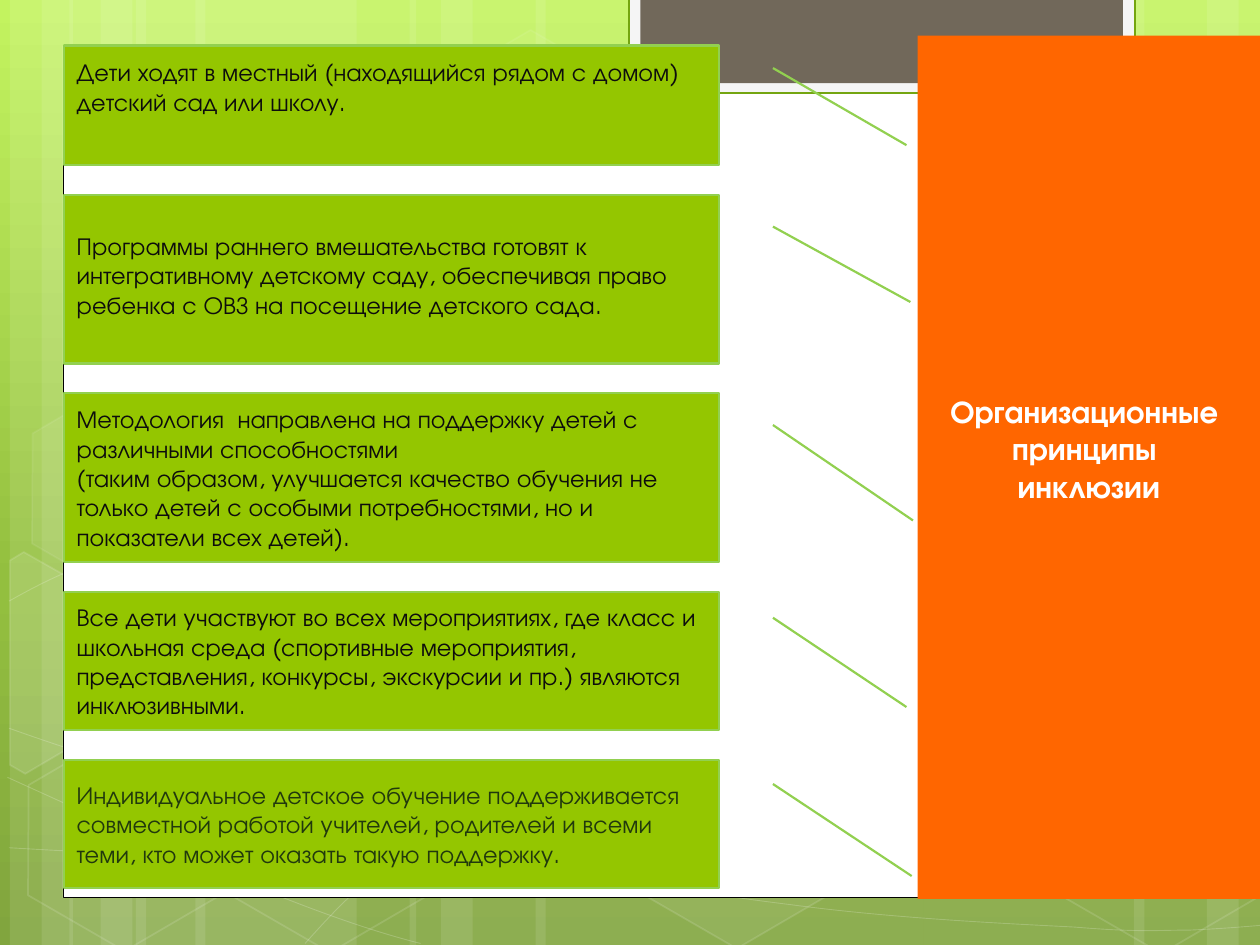
from copy import deepcopy

from lxml import etree
from pptx import Presentation
from pptx.dml.color import RGBColor
from pptx.enum.shapes import MSO_SHAPE
from pptx.enum.text import MSO_ANCHOR, PP_ALIGN
from pptx.oxml.ns import qn
from pptx.util import Cm, Pt

RECTANGLE, HEXAGON = MSO_SHAPE.RECTANGLE, MSO_SHAPE.HEXAGON
CALLOUT = MSO_SHAPE.LINE_CALLOUT_1
MIDDLE = MSO_ANCHOR.MIDDLE
LEFT, CENTER = PP_ALIGN.LEFT, PP_ALIGN.CENTER

FONT = "TeX Gyre Adventor"
WHITE = RGBColor(0xFF, 0xFF, 0xFF)
BLACK = RGBColor(0x00, 0x00, 0x00)
PALE_GREY = RGBColor(0xF5, 0xF5, 0xF5)
TAUPE = RGBColor(0x71, 0x68, 0x5A)
OLIVE = RGBColor(0x74, 0xA5, 0x10)
ORANGE = RGBColor(0xFF, 0x66, 0x00)
LIME = RGBColor(0x94, 0xC6, 0x00)
LIGHT_GREEN = RGBColor(0x92, 0xD0, 0x50)
INK = RGBColor(0x0D, 0x0D, 0x0D)
DARK_GREEN = RGBColor(0x21, 0x39, 0x0D)
SKY = [(0, RGBColor(0xC3, 0xF3, 0x5F)), (0.62, RGBColor(0x93, 0xBF, 0x3F)),
       (1, RGBColor(0x81, 0xA5, 0x3E))]

WIDTH, HEIGHT = 25.4, 19.05

# left, width
BANDS = [(2.74, 4.45), (0.2, 1.27), (0.84, 2.11), (3.94, 4.45), (1.4, 1.27),
         (2.03, 2.11), (18.62, 4.45), (24.33, 1.07), (22.86, 2.11),
         (10.8, 7.82), (8.26, 1.27), (8.89, 2.11)]

# start point, then two control points and an end point for each segment
CURVES = [
    [(0.18, 17.09), (1.55, 17.17), (2.92, 17.25), (4.83, 17.22), (6.73, 17.2),
     (9.09, 17.15), (11.63, 16.89), (14.17, 16.64), (17.78, 16.15),
     (20.12, 15.67), (22.43, 15.19), (24.82, 14.43), (25.58, 14)],
    [(0.18, 12.12), (0.91, 11.71), (1.65, 11.33), (3.07, 10.95), (4.52, 10.57),
     (6.58, 10.01), (8.81, 9.83), (11.07, 9.65), (13.82, 9.63),
     (16.61, 9.83), (19.41, 10.03), (24.05, 10.82), (25.58, 11.02)],
    [(0.15, 15.67), (3.23, 17.07), (6.27, 18.47), (8.48, 19.02)],
    [(0.18, 14.68), (0.97, 14.96), (1.78, 15.24), (3.25, 15.65), (4.72, 16.03),
     (6.93, 16.66), (9.07, 17.09), (11.18, 17.53), (13.84, 17.98),
     (15.95, 18.24), (18.06, 18.52), (20.32, 18.62), (21.67, 18.69),
     (22.99, 18.8), (23.34, 18.75), (24, 18.75), (24.66, 18.72),
     (25.12, 18.68), (25.58, 18.64)],
    [(6.15, 19.02), (6.6, 18.52), (7.06, 18.01), (7.67, 17.55), (8.28, 17.09),
     (9.14, 16.59), (9.86, 16.23), (10.57, 15.88), (11, 15.72),
     (11.94, 15.47), (12.85, 15.21), (14.55, 14.86), (15.44, 14.68),
     (16.36, 14.5), (16.48, 14.5), (17.27, 14.45), (18.06, 14.38),
     (19.3, 14.27), (20.17, 14.27), (21.06, 14.25), (22.5, 14.27),
     (22.5, 14.27), (23, 14.27), (23.6, 14.27), (24.21, 14.27),
     (24.66, 14.3), (25.1, 14.33), (25.55, 14.38)],
]

# left, top, fill opacity (None for no fill), line opacity
HEXAGONS = [(8.48, 0.91, 4, 8), (12.62, 14.96, 6, 12), (0.28, 15.01, None, 12),
            (0.36, 7.92, 7, 8), (4.42, 15.04, None, 12), (21.18, 15.06, None, 12)]
CUT_HEXAGON = [(0.2, 11.3), (0.48, 11.13), (2.44, 12.24), (2.41, 14.48),
               (0.51, 15.6), (0.2, 15.42)]

# lines of text, height, extra space above and below, leader end (y, x), colour
PRINCIPLES = [
    (["Дети ходят в местный (находящийся рядом с домом) детский сад или школу."],
     2.41, 0, 0.76, (0.833, -0.287), INK),
    (["Программы раннего вмешательства готовят к интегративному детскому саду, "
      "обеспечивая право ребенка с ОВЗ на посещение детского сада."],
     3.4, 0.59, 0.76, (0.635, -0.293), INK),
    (["Методология  направлена на поддержку детей с различными способностями ",
      "(таким образом, улучшается качество обучения не только детей с особыми "
      "потребностями, но и показатели всех детей)."],
     3.4, 0, 0, (0.754, -0.297), INK),
    (["Все дети участвуют во всех мероприятиях, где класс и школьная среда "
      "(спортивные мероприятия, представления, конкурсы, экскурсии и пр.) "
      "являются инклюзивными."],
     2.79, 0, 0, (0.833, -0.287), INK),
    (["Индивидуальное детское обучение поддерживается совместной работой "
      "учителей, родителей и всеми теми, кто может оказать такую поддержку."],
     2.59, 0, 0, (0.904, -0.295), DARK_GREEN),
]


def paint(shape, fill=None, line=None, weight=1, fill_alpha=100, line_alpha=100):
    """Sets fill and outline; the alphas are opacities in percent."""
    shape.shadow.inherit = False
    for part, colour in ((shape.fill, fill), (shape.line.fill, line)):
        if colour is None:
            part.background()
        else:
            part.solid()
            part.fore_color.rgb = colour
    if line is not None:
        shape.line.width = Pt(weight)
    for route, alpha in (("p:spPr/a:solidFill/a:srgbClr", fill_alpha),
                         ("p:spPr/a:ln/a:solidFill/a:srgbClr", line_alpha)):
        if alpha < 100:
            for colour in shape.element.xpath(route):
                etree.SubElement(colour, qn("a:alpha"), val=str(alpha * 1000))


def add_box(slide, kind, left, top, width, height, **style):
    box = slide.shapes.add_shape(kind, Cm(left), Cm(top), Cm(width), Cm(height))
    paint(box, **style)
    return box


def add_outline(slide, points, close, **style):
    start, *rest = [(Cm(x), Cm(y)) for x, y in points]
    builder = slide.shapes.build_freeform(*start)
    builder.add_line_segments(rest, close=close)
    outline = builder.convert_to_shape()
    paint(outline, **style)
    return outline


def bend(outline):
    """Joins each three straight segments into one cubic Bezier segment."""
    segments = outline.element.xpath(".//a:lnTo")
    for i in range(0, len(segments), 3):
        bezier = etree.Element(qn("a:cubicBezTo"))
        segments[i].addprevious(bezier)
        for segment in segments[i:i + 3]:
            bezier.append(segment[0])
            segment.getparent().remove(segment)


def write(shape, paragraphs, size, colour, align, bold=False, above=0, below=0):
    """Writes paragraphs, each a list of lines, with extra space above and below."""
    frame = shape.text_frame
    frame.word_wrap = True
    frame.vertical_anchor = MIDDLE
    frame.margin_top, frame.margin_bottom = Cm(0.13 + above), Cm(0.13 + below)
    for i, lines in enumerate(paragraphs):
        paragraph = frame.paragraphs[0] if i == 0 else frame.add_paragraph()
        paragraph.alignment = align
        for j, line in enumerate(lines):
            if j:
                paragraph.add_line_break()
            run = paragraph.add_run()
            run.text = line
            run.font.name, run.font.size, run.font.bold = FONT, Pt(size), bold
            run.font.color.rgb = colour


def add_backdrop(slide):
    fill = slide.background.fill
    fill.gradient()
    fill.gradient_angle = 270
    stop_list = slide.element.xpath(".//a:gsLst")[0]
    stop_list.append(deepcopy(stop_list[-1]))
    for stop, (position, colour) in zip(fill.gradient_stops, SKY):
        stop.position = position
        stop.color.rgb = colour
    for left, width in BANDS:
        add_box(slide, RECTANGLE, left, 0, width, HEIGHT, fill=WHITE, fill_alpha=10)
    for curve in CURVES:
        bend(add_outline(slide, curve, False, line=WHITE, weight=0.5, line_alpha=20))
    for left, top, fill_alpha, line_alpha in HEXAGONS:
        hexagon = add_box(slide, HEXAGON, left, top, 4.45, 3.86,
                          fill=WHITE if fill_alpha else None, line=WHITE,
                          fill_alpha=fill_alpha or 100, line_alpha=line_alpha)
        hexagon.adjustments[0] = 0.285
        hexagon.rotation = 30
    add_outline(slide, CUT_HEXAGON, True, fill=WHITE, line=WHITE,
                fill_alpha=10, line_alpha=12)


def add_panel(slide, left, top, width, height):
    add_box(slide, RECTANGLE, left, top, width, height, fill=WHITE, line=BLACK, weight=0.5)
    add_box(slide, RECTANGLE, left + 11.41, top - 0.97, 10.21, 1.93,
            fill=PALE_GREY, line=OLIVE, weight=1.25)
    add_box(slide, RECTANGLE, left + 11.64, top - 0.97, 9.73, 1.73, fill=TAUPE)


def add_title(slide, left, top, width, height):
    title = add_box(slide, RECTANGLE, left, top, width, height, fill=ORANGE)
    write(title, [["Организационные "], ["принципы ", "инклюзии"]], 18, WHITE, CENTER,
          bold=True, below=0.76)


def add_principles(slide, left, top, width, gap):
    for lines, height, above, below, leader_end, colour in PRINCIPLES:
        callout = add_box(slide, CALLOUT, left, top, width, height,
                          fill=LIME, line=LIGHT_GREEN, weight=1.25)
        callout.element.spPr.xfrm.set("flipH", "1")
        for i, value in enumerate((0.188, -0.083, *leader_end)):
            callout.adjustments[i] = value
        write(callout, [lines], 14, colour, LEFT, above=above, below=below)
        top += height + gap


def main():
    deck = Presentation()
    deck.slide_width, deck.slide_height = Cm(WIDTH), Cm(HEIGHT)
    slide = deck.slides.add_slide(deck.slide_layouts[6])
    add_backdrop(slide)
    add_panel(slide, 1.27, 0.92, 22.86, 17.18)
    add_title(slide, 18.5, 0.72, 6.9, 17.4)
    add_principles(slide, 1.3, 0.92, 13.19, 0.6)
    deck.save("out.pptx")


if __name__ == "__main__":
    main()
